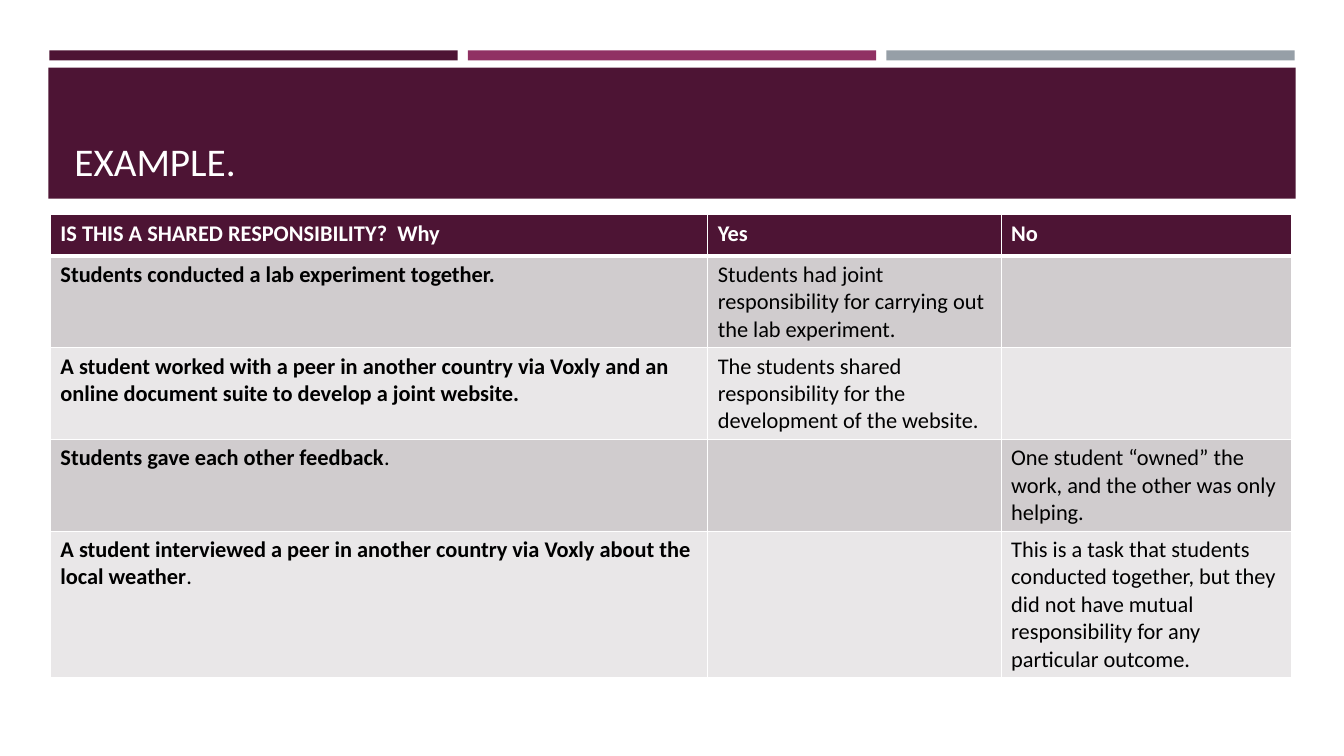
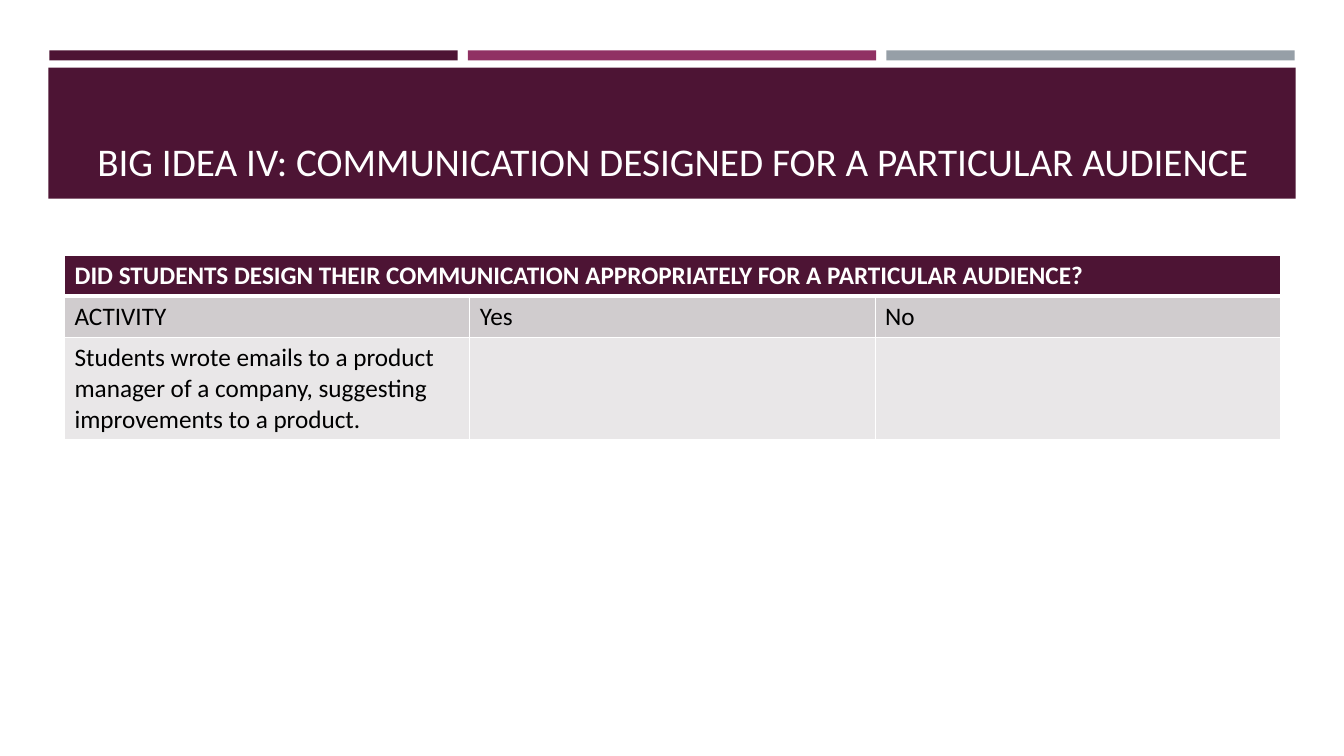
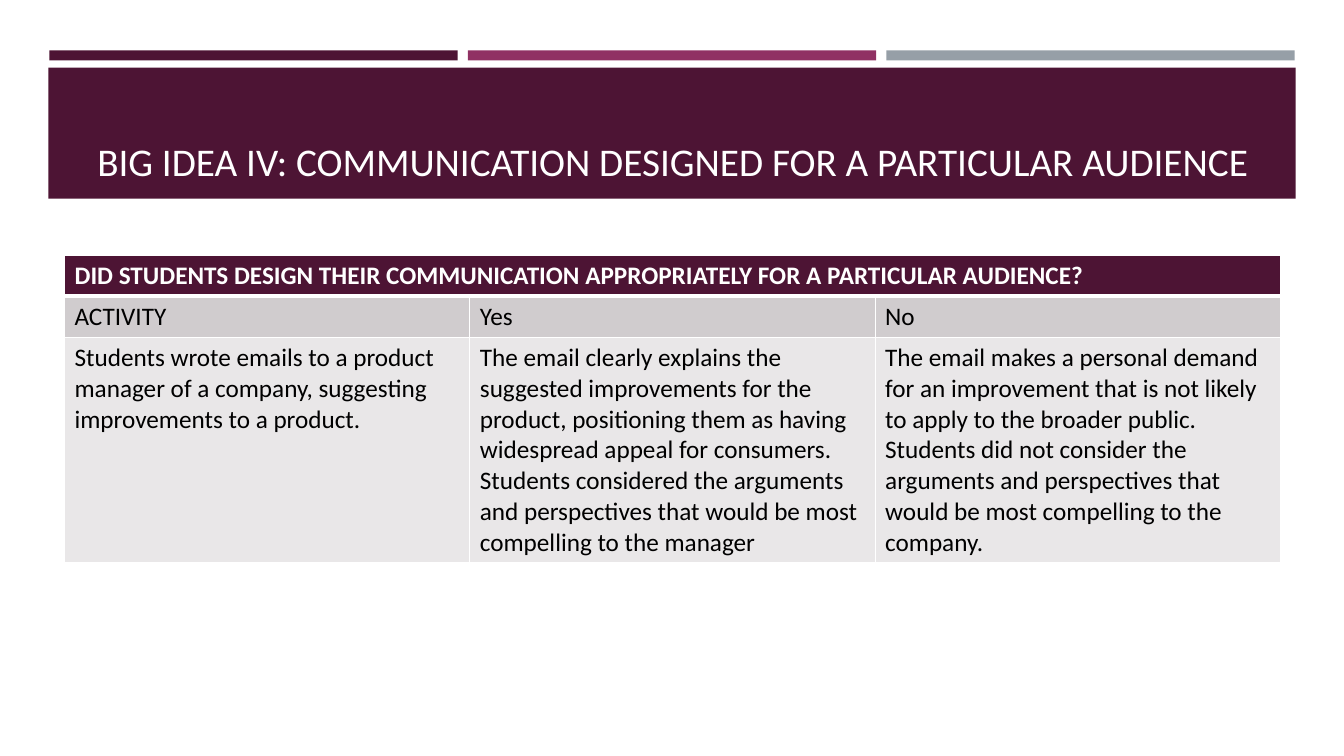
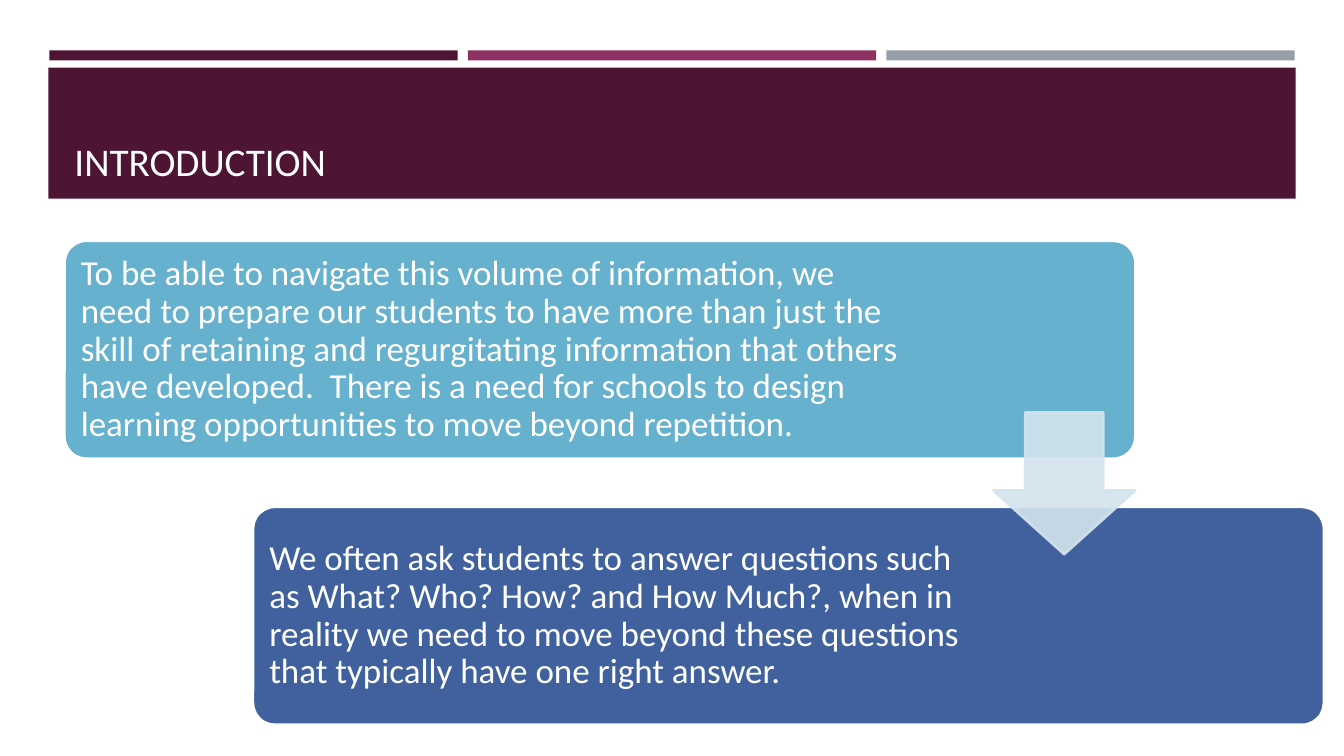
import pptx
import pptx.dml.color
import pptx.enum.shapes
import pptx.enum.text
import pptx.oxml.ns
import pptx.util
from lxml import etree

Inches = pptx.util.Inches
Pt = pptx.util.Pt
SHAPES = pptx.enum.shapes.MSO_SHAPE
ALIGN = pptx.enum.text.PP_ALIGN
ANCHOR = pptx.enum.text.MSO_ANCHOR
qn = pptx.oxml.ns.qn

FONT = "Calibri"
COLORS = {
    "plum": "4D1434",
    "magenta": "903163",
    "slate": "969FA7",
    "white": "FFFFFF",
    "black": "000000",
    "row_dark": "D0CCCE",
    "row_light": "E9E7E8",
    "sky": "66B1CE",
    "blue": "40619D",
    "mist": "D3E4ED",
}
AUDIENCE_TITLE = "BIG IDEA IV: COMMUNICATION DESIGNED FOR A PARTICULAR AUDIENCE"
AUDIENCE_HEADINGS = [
    ["DID STUDENTS DESIGN THEIR COMMUNICATION APPROPRIATELY FOR A PARTICULAR AUDIENCE?", "", ""],
    ["ACTIVITY", "Yes", "No"],
]
EMAIL_ACTIVITY = ("Students wrote emails to a product manager of a company, "
                  "suggesting improvements to a product.")


def rgb(name):
    return pptx.dml.color.RGBColor.from_string(COLORS[name])


def style_font(paragraph, size, color):
    font = paragraph.font
    font.name, font.size = FONT, Pt(size)
    font.color.rgb = rgb(color)


def add_block(slide, kind, box, fill, line=None):
    block = slide.shapes.add_shape(kind, *map(Inches, box))
    block.shadow.inherit = False
    block.fill.solid()
    block.fill.fore_color.rgb = rgb(fill)
    if line:
        block.line.color.rgb = rgb(line)
        block.line.width = Pt(1.75)
    else:
        block.line.fill.background()
    return block


def add_titled_slide(deck, title, align=ALIGN.LEFT):
    slide = deck.slides.add_slide(deck.slide_layouts[6])
    for i, color in enumerate(("plum", "magenta", "slate")):
        add_block(slide, SHAPES.RECTANGLE, (0.49 + i * 4.15, 0.5, 4.05, 0.1), color)
    add_block(slide, SHAPES.RECTANGLE, (0.48, 0.67, 12.37, 1.3), "plum")
    heading = slide.shapes.add_textbox(*map(Inches, (0.64, 0.77, 12.06, 1.11))).text_frame
    heading.word_wrap = True
    heading.vertical_anchor = ANCHOR.BOTTOM
    paragraph = heading.paragraphs[0]
    paragraph.text = title
    paragraph.alignment = align
    style_font(paragraph, 28, "white")
    return slide


def set_borders(cell, top, bottom):
    properties = cell._tc.get_or_add_tcPr()
    for side, width in (("lnL", 1), ("lnR", 1), ("lnT", top), ("lnB", bottom)):
        border = etree.SubElement(properties, qn(f"a:{side}"), w=str(Pt(width)))
        fill = etree.SubElement(border, qn("a:solidFill"))
        etree.SubElement(fill, qn("a:srgbClr"), val=COLORS["white"])


def fill_cell(cell, content, row, size):
    header = row == 0
    set_borders(cell, 3 if row == 1 else 1, 3 if header else 1)
    cell.fill.solid()
    cell.fill.fore_color.rgb = rgb("plum" if header else "row_dark" if row % 2 else "row_light")
    paragraph = cell.text_frame.paragraphs[0]
    style_font(paragraph, size, "white" if header else "black")
    if isinstance(content, tuple):
        for text, bold in zip(content, (True, False)):
            run = paragraph.add_run()
            run.text = text
            run.font.bold = bold
    else:
        paragraph.text = content
        paragraph.font.bold = header


def add_answer_table(slide, left, top, widths, heights, rows, size):
    frame = slide.shapes.add_table(len(rows), len(widths), Inches(left), Inches(top),
                                   Inches(sum(widths)), Inches(sum(heights)))
    table = frame.table
    table.horz_banding = False
    for column, width in zip(table.columns, widths):
        column.width = Inches(width)
    for r, (contents, height) in enumerate(zip(rows, heights)):
        table.rows[r].height = Inches(height)
        for c, content in enumerate(contents):
            fill_cell(table.cell(r, c), content, r, size)
    return table


def add_audience_slide(deck, yes, no, answer_height):
    slide = add_titled_slide(deck, AUDIENCE_TITLE, ALIGN.CENTER)
    rows = AUDIENCE_HEADINGS + [[EMAIL_ACTIVITY, yes, no]]
    table = add_answer_table(slide, 0.64, 2.53, [4.02] * 3, [0.41, 0.41, answer_height], rows, 18)
    table.cell(0, 0).merge(table.cell(0, 2))


def add_step(slide, left, top, fill, text, right_inset):
    step = add_block(slide, SHAPES.ROUNDED_RECTANGLE, (left, top, 10.62, 2.16), fill, "white")
    step.adjustments[0] = 0.1
    frame = step.text_frame
    frame.word_wrap = True
    frame.vertical_anchor = ANCHOR.MIDDLE
    frame.margin_left = frame.margin_top = frame.margin_bottom = Inches(0.1)
    frame.margin_right = Inches(right_inset)
    paragraph = frame.paragraphs[0]
    paragraph.text = text
    paragraph.alignment = ALIGN.LEFT
    paragraph.line_spacing = 0.9
    style_font(paragraph, 25, "white")


def add_step_arrow(slide):
    arrow = add_block(slide, SHAPES.DOWN_ARROW, (9.85, 4.09, 1.41, 1.41), "mist", "mist")
    arrow.adjustments[0] = 0.55
    arrow.adjustments[1] = 0.45
    for color in arrow._element.spPr.iter(qn("a:srgbClr")):
        etree.SubElement(color, qn("a:alpha"), val="90000")


def add_example_slide(deck):
    slide = add_titled_slide(deck, "EXAMPLE.")
    rows = [
        ["IS THIS A SHARED RESPONSIBILITY?  Why", "Yes", "No"],
        [("Students conducted a lab experiment together.",),
         "Students had joint responsibility for carrying out the lab experiment.", ""],
        [("A student worked with a peer in another country via Voxly and "
          "an online document suite to develop a joint website.",),
         "The students shared responsibility for the development of the website.", ""],
        [("Students gave each other feedback", "."), "",
         "One student “owned” the work, and the other was only helping."],
        [("A student interviewed a peer in another country via Voxly about the local weather", "."),
         "", "This is a task that students conducted together, but they did not have "
         "mutual responsibility for any particular outcome."],
    ]
    add_answer_table(slide, 0.5, 2.13, [6.52, 2.91, 2.88], [0.41, 0.91, 0.91, 0.91, 1.45], rows, 16)


def add_introduction_slide(deck):
    slide = add_titled_slide(deck, "INTRODUCTION")
    add_step(slide, 0.64, 2.39, "sky",
             "To be able to navigate this volume of information, we need to prepare our students "
             "to have more than just the skill of retaining and regurgitating information that "
             "others have developed.  There is a need for schools to design learning "
             "opportunities to move beyond repetition.", 2.21)
    add_step(slide, 2.51, 5.03, "blue",
             "We often ask students to answer questions such as What? Who? How? and How Much?, "
             "when in reality we need to move beyond these questions that typically have one "
             "right answer.", 3.38)
    add_step_arrow(slide)


def main():
    deck = pptx.Presentation()
    deck.slide_width, deck.slide_height = Inches(13.33), Inches(7.5)
    add_example_slide(deck)
    add_audience_slide(deck, "", "", 1.01)
    add_audience_slide(
        deck,
        "The email clearly explains the suggested improvements for the product, positioning them "
        "as having widespread appeal for consumers. Students considered the arguments and "
        "perspectives that would be most compelling to the manager",
        "The email makes a personal demand for an improvement that is not likely to apply to the "
        "broader public. Students did not consider the arguments and perspectives that would be "
        "most compelling to the company.",
        2.23)
    add_introduction_slide(deck)
    deck.save("out.pptx")


if __name__ == "__main__":
    main()
